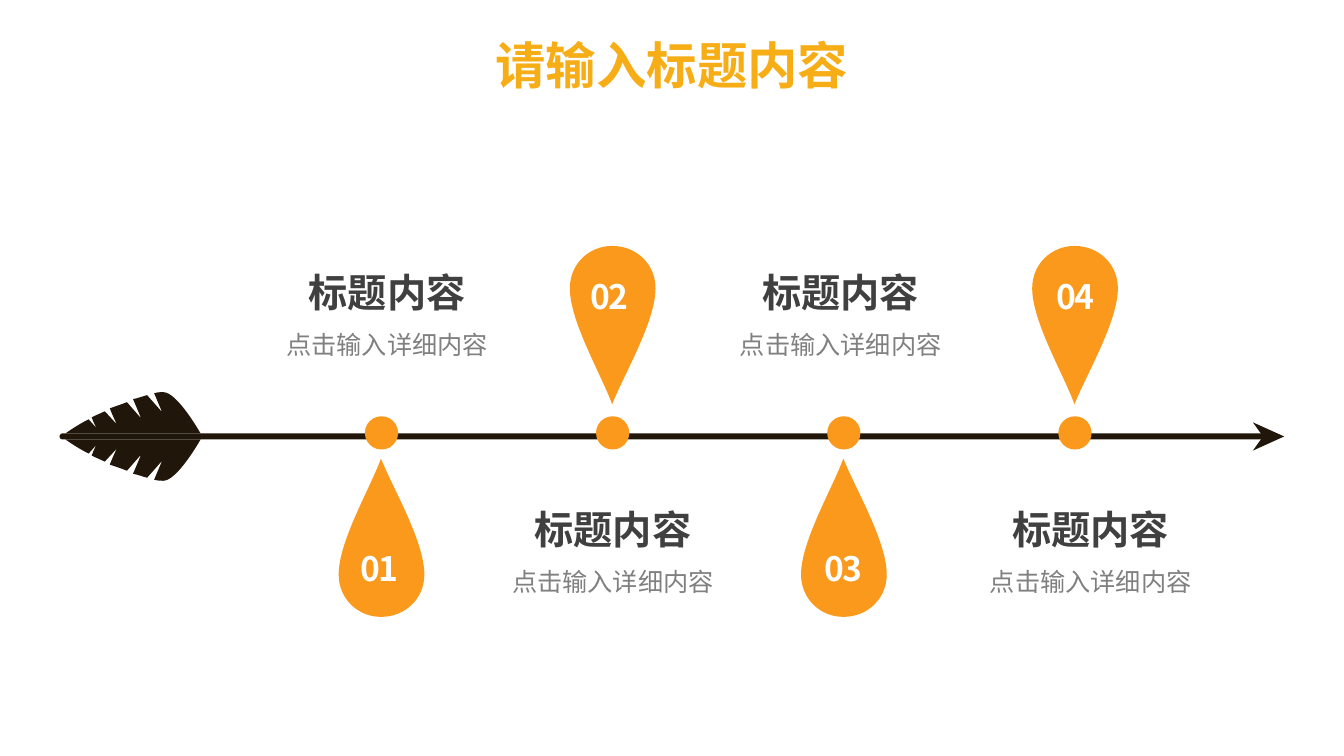
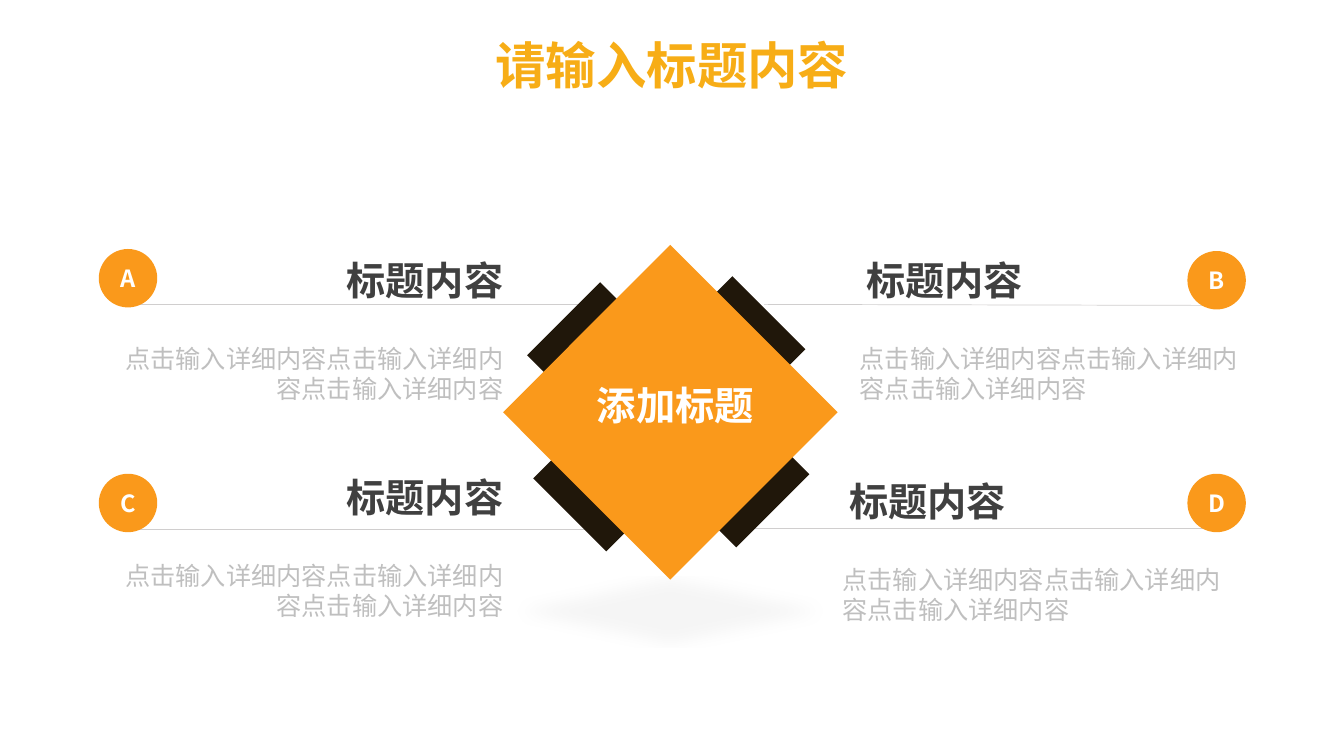
from lxml import etree
from pptx import Presentation
from pptx.dml.color import RGBColor
from pptx.enum.shapes import MSO_CONNECTOR, MSO_SHAPE
from pptx.enum.text import MSO_ANCHOR, MSO_AUTO_SIZE, PP_ALIGN
from pptx.oxml.ns import qn
from pptx.util import Inches, Pt

STRAIGHT = MSO_CONNECTOR.STRAIGHT
OVAL, DIAMOND = MSO_SHAPE.OVAL, MSO_SHAPE.DIAMOND
ROUNDED, BADGE = MSO_SHAPE.ROUNDED_RECTANGLE, MSO_SHAPE.FLOWCHART_CONNECTOR
TOP, MIDDLE = MSO_ANCHOR.TOP, MSO_ANCHOR.MIDDLE
FIT_TEXT = MSO_AUTO_SIZE.SHAPE_TO_FIT_TEXT
LEFT, CENTER, RIGHT = PP_ALIGN.LEFT, PP_ALIGN.CENTER, PP_ALIGN.RIGHT

# Grid: square cells, measured in columns and rows
COLUMNS, ROWS = 40 / 3, 7.5
CELL = Inches(1)

# Shared colours and text formats
FONT = "Noto Sans CJK SC"
ORANGE = RGBColor(0xFA, 0x99, 0x1B)
GOLD = RGBColor(0xF7, 0xAD, 0x16)
DARK = RGBColor(0x20, 0x17, 0x0A)
WHITE = RGBColor(0xFF, 0xFF, 0xFF)
CHARCOAL = RGBColor(0x40, 0x40, 0x40)
GRAY = RGBColor(0x80, 0x80, 0x80)
SILVER = RGBColor(0xBF, 0xBF, 0xBF)
RULE = RGBColor(0xD0, 0xCE, 0xCE)

TITLE = (GOLD, {"size": Pt(36), "bold": True})
HEADING = (CHARCOAL, {"size": Pt(28), "bold": True})
CAPTION = (GRAY, {"size": Pt(18), "bold": False})
DETAIL = (SILVER, {"size": Pt(18), "bold": False})
NUMBER = (WHITE, {"size": Pt(24), "bold": True})
LETTER = (WHITE, {"size": Pt(16.9), "bold": True})
CORE = (WHITE, {"size": Pt(28.1), "bold": True})

# Wording
TITLE_TEXT = "请输入标题内容"
HEADING_TEXT = "标题内容"
DETAIL_TEXT = "点击输入详细内容"

# Arrow and pin outlines: a pair is a line, six values are a curve
AXIS = 4.33
FEATHER = [
    (1.62, 0.44), (1.6, 0.44, 1.57, 0.44, 1.53, 0.43),
    (1.57, 0.33, 1.61, 0.24, 1.61, 0.24), (1.46, 0.41),
    (1.42, 0.4, 1.37, 0.38, 1.32, 0.37),
    (1.36, 0.28, 1.4, 0.18, 1.4, 0.18), (1.26, 0.34),
    (1.21, 0.32, 1.15, 0.3, 1.09, 0.28),
    (1.12, 0.2, 1.16, 0.12, 1.16, 0.12), (1.04, 0.25),
    (1, 0.23, 0.95, 0.21, 0.91, 0.19),
    (0.93, 0.13, 0.96, 0.08, 0.96, 0.08), (0.88, 0.17),
    (0.8, 0.13, 0.72, 0.08, 0.65, 0.03), (1.99, 0.03),
    (1.99, 0.03, 1.76, 0.44, 1.62, 0.44),
]
ARROWHEAD = [(12.74, 0), (12.43, 0.14), (12.53, 0), (12.43, -0.14)]
PIN = [
    (0, 0), (-0.11, 0.3, -0.42, 0.82, -0.42, 1.15),
    (-0.42, 1.39, -0.23, 1.57, 0, 1.57),
    (0.24, 1.57, 0.43, 1.39, 0.43, 1.15),
    (0.43, 0.82, 0.12, 0.3, 0, 0),
]

# Timeline: number, left of its box, left of its heading
FIRST_PIN, LAST_PIN = 3.78, 10.66
STOPS = [("01", 3.37, 2.9), ("02", 5.65, 5.14),
         ("03", 7.97, 7.4), ("04", 10.27, 9.88)]
PIN_STEP = (LAST_PIN - FIRST_PIN) / (len(STOPS) - 1)

# Callouts: letter, badge corner, rule (start and end), text (edge, row)
CALLOUTS = [
    ("A", (0.98, 2.47), (1.31, 3.02, 6.23, 3.02), (5.09, 2.49)),
    ("B", (11.78, 2.49), (7.58, 3.02, 12.07, 3.03), (8.43, 2.49)),
    ("C", (0.98, 4.7), (1.31, 5.25, 6.23, 5.25), (5.09, 4.64)),
    ("D", (11.78, 4.7), (6.93, 5.24, 12.18, 5.24), (8.26, 4.68)),
]
BACK_DIAMONDS = [(5.23, 2.8), (5.29, 4.02), (6.58, 3.98), (6.54, 2.74)]


def cells(*counts):
    """Turn numbers of columns or rows into lengths."""
    return [round(count * CELL) for count in counts]


def paint(shape, color):
    shape.shadow.inherit = False
    shape.fill.solid()
    shape.fill.fore_color.rgb = color
    shape.line.fill.background()
    return shape


def write(frame, text, style, align=CENTER, spacing=None):
    color, formats = style
    para = frame.paragraphs[0]
    para.alignment = align
    span = para.add_run()
    span.text = text
    span.font.name = FONT
    span.font.color.rgb = color
    for name, value in formats.items():
        setattr(span.font, name, value)
    properties = span.font._element
    latin = properties.find(qn("a:latin"))
    latin.addnext(etree.Element(qn("a:ea"), typeface=FONT))
    if spacing is not None:
        properties.set("spc", str(spacing))


def add_text(page, at, text, style, align=CENTER, anchor=MIDDLE,
             wrap=True, spacing=None):
    frame = page.shapes.add_textbox(*cells(*at)).text_frame
    settings = {"word_wrap": wrap, "auto_size": FIT_TEXT,
                "vertical_anchor": anchor}
    for name, value in settings.items():
        setattr(frame, name, value)
    write(frame, text, style, align, spacing)


def add_solid(page, kind, at, color):
    return paint(page.shapes.add_shape(kind, *cells(*at)), color)


def bend(shape, outline):
    """Join the three lines that stand for each curve into one curve."""
    lines = iter(list(shape._element.iter(qn("a:lnTo"))))
    for part in outline[1:]:
        line = next(lines)
        if len(part) == 6:
            line.tag = qn("a:cubicBezTo")
            for _ in range(2):
                extra = next(lines)
                line.append(extra[0])
                extra.getparent().remove(extra)


def add_outline(page, outline, color, origin, direction=1):
    """Draw an outline from its origin; direction -1 points it upwards."""
    left, top = origin
    points = [cells(left + part[i], top + direction * part[i + 1])
              for part in outline for i in range(0, len(part), 2)]
    builder = page.shapes.build_freeform(*points[0], scale=1.0)
    builder.add_line_segments(points[1:], close=True)
    shape = paint(builder.convert_to_shape(), color)
    bend(shape, outline)


def add_rule(page, ends):
    rule = page.shapes.add_connector(STRAIGHT, *cells(*ends))
    rule.line.color.rgb = RULE
    rule.line.width = Pt(0.5)
    etree.SubElement(rule._element.spPr, qn("a:effectLst"))


def add_floor_shadow(shape):
    """Cast a flat, mirrored shadow below the shape."""
    effects = shape._element.spPr.find(qn("a:effectLst"))
    shadow = etree.SubElement(
        effects, qn("a:outerShdw"), blurRad=str(Pt(12)), dist="0",
        dir="5400000", sx="90000", sy="-19000", algn="b", rotWithShape="0")
    color = etree.SubElement(shadow, qn("a:srgbClr"), val="000000")
    etree.SubElement(color, qn("a:alpha"), val="4000")


def add_page(deck):
    page = deck.slides.add_slide(deck.slide_layouts[6])
    add_text(page, (4.74, 0.28, 3.85, 0.71), TITLE_TEXT, TITLE)
    return page


def add_arrow(page):
    for direction in (-1, 1):
        add_outline(page, FEATHER, DARK, (0, AXIS), direction)
    shaft = add_solid(page, ROUNDED, (0.59, 4.3, 11.99, 0.06), DARK)
    shaft.adjustments[0] = 0.5
    add_outline(page, ARROWHEAD, DARK, (0, AXIS))


def add_stop(page, index, number, number_left, heading_left):
    center = FIRST_PIN + index * PIN_STEP
    below = index % 2 == 0
    tip, direction = (4.55, 1) if below else (4.01, -1)
    number_top, heading_top = (5.39, 2.61) if below else (2.69, 4.96)
    add_solid(page, OVAL, (center - 0.16, 4.13, 0.33, 0.33), ORANGE)
    add_outline(page, PIN, ORANGE, (center, tip), direction)
    add_text(page, (number_left, number_top, 0.79, 0.5), number, NUMBER,
             anchor=TOP, spacing=-150)
    add_text(page, (heading_left, heading_top, 1.88, 0.57),
             HEADING_TEXT, HEADING)
    add_text(page, (heading_left - 0.17, heading_top + 0.61, 2.22, 0.4),
             DETAIL_TEXT, CAPTION)


def add_callout(page, letter, corner, rule, text_place):
    add_rule(page, rule)
    badge = add_solid(page, BADGE, (*corner, 0.58, 0.58), ORANGE)
    badge.text_frame.vertical_anchor = MIDDLE
    write(badge.text_frame, letter, LETTER)

    # Text on the left side ends at its edge, on the right it starts there
    edge, top = text_place
    on_left = edge < COLUMNS / 2
    heading_align, detail_align = (RIGHT, RIGHT) if on_left else (CENTER, LEFT)
    blocks = [(1.88, 0, 0.57, HEADING_TEXT, HEADING, heading_align),
              (4.02, 0.86, 0.71, DETAIL_TEXT * 3, DETAIL, detail_align)]
    for width, drop, height, text, style, align in blocks:
        left = edge - width if on_left else edge
        add_text(page, (left, top + drop, width, height), text, style, align)


def add_center(page):
    for corner in BACK_DIAMONDS:
        add_solid(page, DIAMOND, (*corner, 1.45, 1.45), DARK)
    front = add_solid(page, DIAMOND, (4.99, 2.43, 3.32, 3.32), ORANGE)
    add_floor_shadow(front)
    add_text(page, (5.81, 3.73, 1.78, 0.57), "添加标题", CORE,
             anchor=TOP, wrap=False)


def main():
    deck = Presentation()
    deck.slide_width, deck.slide_height = cells(COLUMNS, ROWS)

    # Arrow timeline
    page = add_page(deck)
    add_arrow(page)
    for index, stop in enumerate(STOPS):
        add_stop(page, index, *stop)

    # Diamond with four callouts
    page = add_page(deck)
    for callout in CALLOUTS:
        add_callout(page, *callout)
    add_center(page)

    deck.save("out.pptx")


if __name__ == "__main__":
    main()
